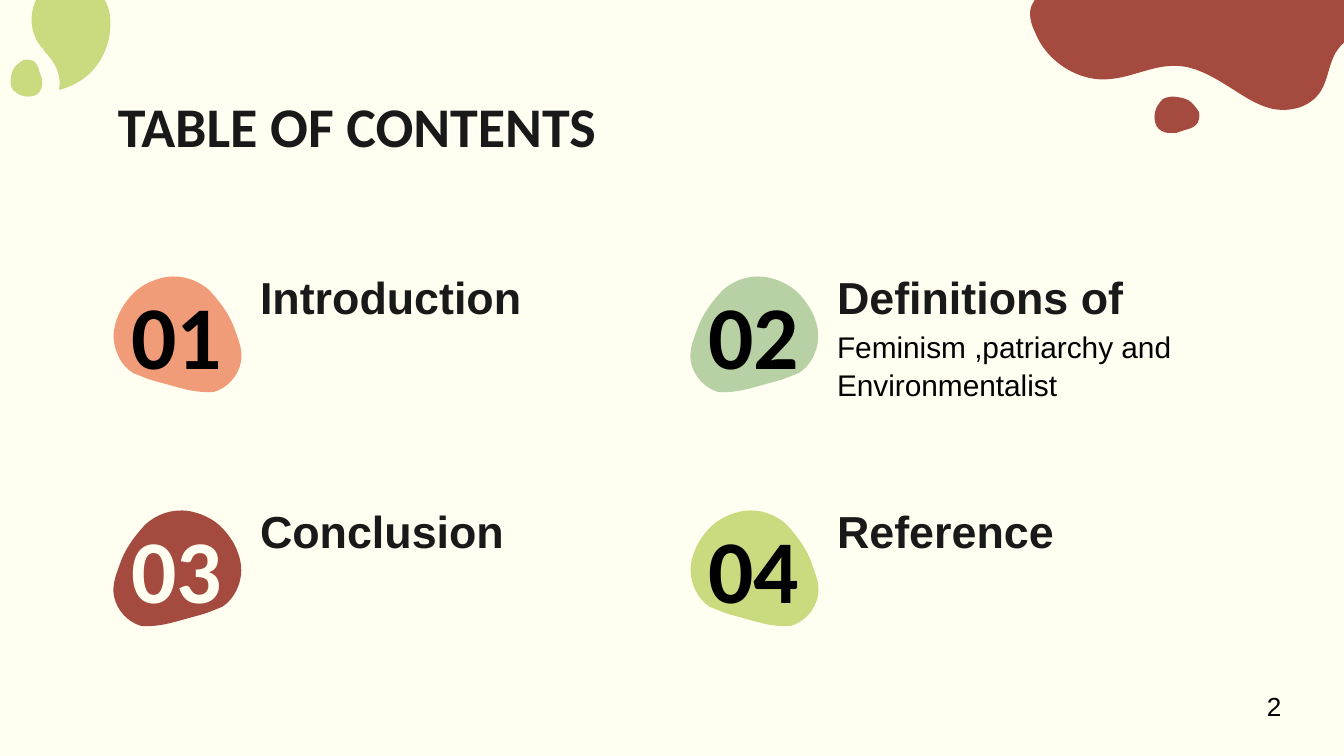
from pptx import Presentation
from pptx import util as u
from pptx.dml.color import RGBColor
from pptx.enum import text
from pptx.oxml import ns

PX = 914400 / 134.4
CREAM = RGBColor(0xFF, 0xFE, 0xF1)
BLACK = RGBColor(0, 0, 0)
INK = RGBColor(0x19, 0x19, 0x19)
PEACH = RGBColor(0xF1, 0x9C, 0x79)
RUST = RGBColor(0xA4, 0x4A, 0x3F)
SAGE = RGBColor(0xB7, 0xD1, 0xA5)
LIME = RGBColor(0xCA, 0xDA, 0x7E)

BADGE = [
    (39, 105), (68, 113), (79, 116, 91, 118, 102, 117),
    (115, 113, 126, 102, 129, 87), (131, 76, 127, 66, 123, 55),
    (118, 40, 108, 27, 98, 16), (86, 5, 71, 0, 55, 2),
    (43, 4, 32, 9, 24, 16), (12, 27, 4, 41, 2, 56),
    (0, 72, 8, 90, 21, 98), (26, 100, 33, 103, 39, 105),
]
CLOUD = [
    (293, 119), (301, 106, 301, 88, 311, 76), (317, 68, 328, 63, 333, 54),
    (340, 39, 332, 21, 320, 13), (308, 4, 292, 4, 278, 2),
    (199, 0, 120, 6, 42, 15), (27, 16, 10, 19, 4, 33),
    (0, 41, 3, 52, 7, 60), (19, 91, 53, 111, 83, 107),
    (105, 105, 126, 93, 148, 94), (165, 94, 182, 103, 198, 113),
    (213, 122, 227, 133, 245, 137), (262, 140, 282, 136, 293, 119),
]
PEBBLE = [
    (22, 37), (31, 34), (35, 33, 39, 32, 42, 29), (45, 26, 46, 21, 45, 16),
    (43, 13, 41, 10, 38, 7), (34, 3, 29, 2, 23, 1), (18, 0, 13, 1, 9, 3),
    (6, 6, 3, 10, 2, 13), (0, 18, 0, 24, 2, 29), (4, 34, 10, 37, 15, 37),
    (18, 37, 19, 37, 22, 37),
]
LEAF = [
    (87, 34), (92, 53, 86, 100, 37, 113), (40, 98, 33, 85, 22, 74),
    (22, 73, 21, 71, 20, 71), (0, 49, 10, 6, 40, 6), (61, 0, 83, 14, 87, 34),
]
SECTIONS = [
    ("01", "Introduction", "", PEACH, BLACK, False),
    ("02", "Definitions of", "Feminism ,patriarchy and Environmentalist", SAGE, BLACK, True),
    ("03", "Conclusion", "", RUST, CREAM, True),
    ("04", "Reference", "", LIME, BLACK, False),
]


def px(length):
    """Turn px into EMU."""
    return u.Emu(round(length * PX))


def add_blob(slide, box, outline, color, mirror=False, turn=0):
    """Fit a closed curved outline, given as points and cubic segments, into a box."""
    segments = [list(zip(part[::2], part[1::2])) for part in outline]
    if mirror:
        span = max(x for points in segments for x, _ in points)
        segments = [[(span - x, y) for x, y in points] for points in segments]
    builder = slide.shapes.build_freeform(*segments[0][0], scale=PX)
    builder.add_line_segments([point for points in segments[1:] for point in points])
    blob = builder.convert_to_shape()
    steps = iter(list(blob._element.iter(ns.qn("a:lnTo"))))
    for points in segments[1:]:
        first = next(steps)
        if len(points) == 3:
            first.tag = ns.qn("a:cubicBezTo")
            for step in (next(steps), next(steps)):
                first.append(step[0])
                step.getparent().remove(step)
    blob.left, blob.top, blob.width, blob.height = map(px, box)
    blob.rotation = turn
    blob.shadow.inherit = False
    blob.fill.solid()
    blob.fill.fore_color.rgb = color
    blob.line.fill.background()


def add_text(slide, box, words, size, color=BLACK, font="Arial", bold=False,
             align=text.PP_ALIGN.LEFT, anchor=text.MSO_ANCHOR.TOP, inset=13, spacing=1.0):
    """Write one paragraph in a box."""
    frame = slide.shapes.add_textbox(*map(px, box)).text_frame
    frame.word_wrap = True
    frame.vertical_anchor = anchor
    frame.margin_left = frame.margin_right = px(13)
    frame.margin_top = frame.margin_bottom = px(inset)
    paragraph = frame.paragraphs[0]
    paragraph.alignment = align
    paragraph.line_spacing = spacing
    run = paragraph.add_run()
    run.text = words
    run.font.size = u.Pt(size)
    run.font.name = font
    run.font.bold = bold
    run.font.color.rgb = color


def add_section(slide, box, number, heading, detail, badge_color, number_color, mirror):
    """Place a numbered badge with its heading and optional detail."""
    left, top, width, height = box
    label_left, label_width = left + 140, width - 140
    add_blob(slide, (left + 5, top + 18, 131, 118), BADGE, badge_color, mirror)
    add_text(slide, (left, top, 140, height), number, 48, number_color, "Calibri", True,
             text.PP_ALIGN.CENTER, text.MSO_ANCHOR.MIDDLE)
    add_text(slide, (label_left, top, label_width, 78), heading, 24, INK, bold=True)
    if detail:
        add_text(slide, (label_left, top + 56, label_width, 97), detail, 16, spacing=1.07)


def add_left_corner(slide, box):
    """Place the lime leaf and pebble."""
    left, top = box[:2]
    add_blob(slide, (left + 22, top - 23, 92, 113), LEAF, LIME)
    add_blob(slide, (left + 7, top + 62, 38, 32), PEBBLE, LIME, turn=270)


def add_right_corner(slide, box):
    """Place the rust cloud and pebble."""
    left, top = box[:2]
    add_blob(slide, (left, top - 28, 340, 140), CLOUD, RUST)
    add_blob(slide, (left + 126, top + 96, 46, 37), PEBBLE, RUST)


def add_contents(slide, box):
    """Lay the sections out in two columns."""
    left, top = box[:2]
    for index, section in enumerate(SECTIONS):
        row, column = divmod(index, 2)
        add_section(slide, (left + column * 577, top + row * 234, 553, 153), *section)


def main():
    """Build and save the contents slide."""
    deck = Presentation()
    deck.slide_width, deck.slide_height = px(1344), px(756)
    slide = deck.slides.add_slide(deck.slide_layouts[6])
    slide.background.fill.solid()
    slide.background.fill.fore_color.rgb = CREAM
    add_contents(slide, (107, 257, 1130, 387))
    add_right_corner(slide, (1028, 0, 316, 134))
    add_left_corner(slide, (0, 0, 114, 97))
    add_text(slide, (1254, 683, 56, 46), "2", 14, inset=7)
    add_text(slide, (105, 79, 1129, 85), "TABLE OF CONTENTS", 30, INK, "Calibri", True)
    deck.save("out.pptx")


if __name__ == "__main__":
    main()
